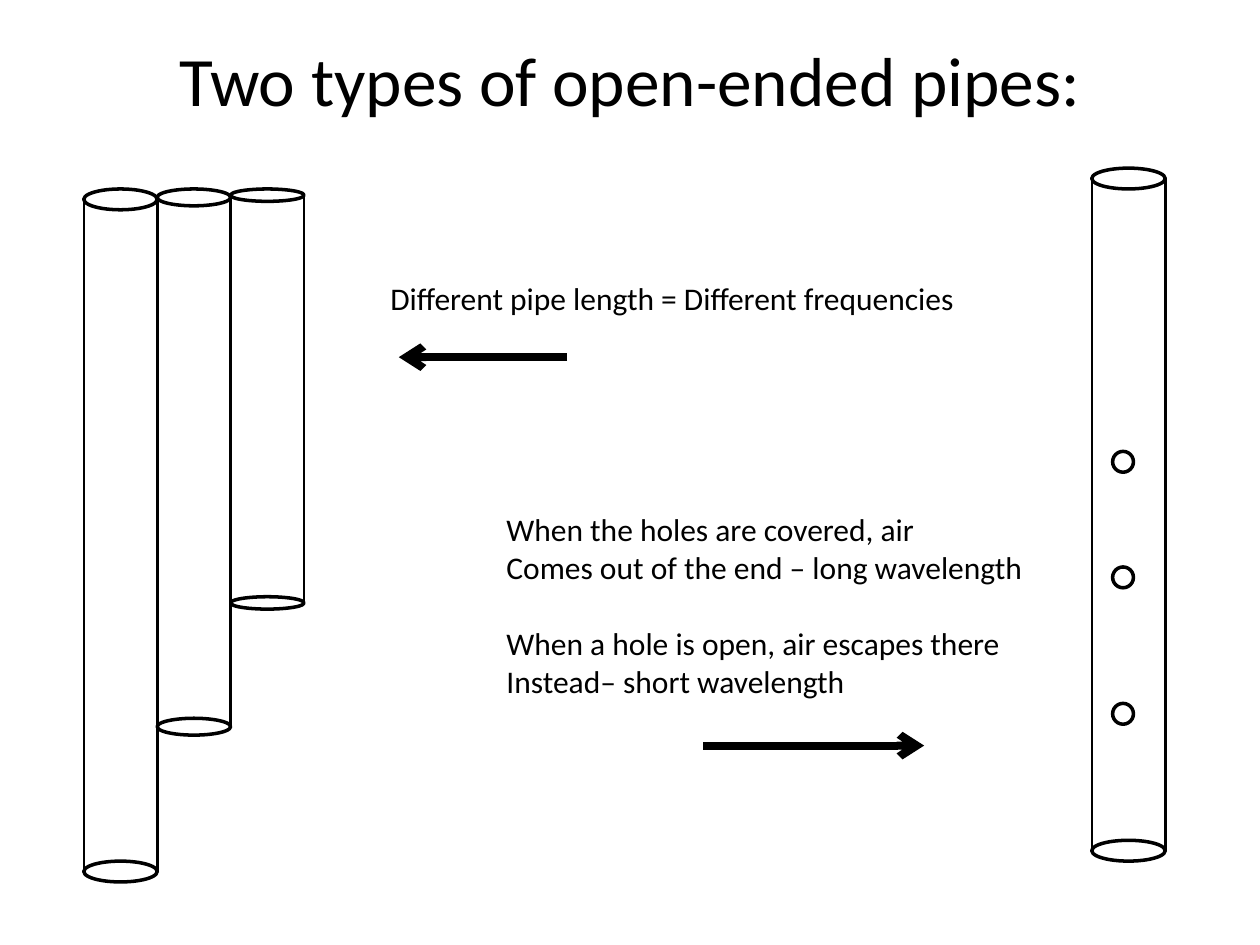
from lxml.etree import SubElement
from pptx import Presentation
from pptx.dml.color import RGBColor
from pptx.enum.shapes import MSO_CONNECTOR, MSO_SHAPE
from pptx.enum.text import MSO_ANCHOR, MSO_AUTO_SIZE, PP_ALIGN
from pptx.oxml.ns import qn
from pptx.util import Cm, Pt

COLORS = {"ink": "000000", "paper": "FFFFFF"}
INK = RGBColor.from_string(COLORS["ink"])

prs = Presentation()
prs.slide_width, prs.slide_height = Cm(25.4), Cm(19.05)
s = prs.slides.add_slide(prs.slide_layouts[6])
s.background.fill.solid()
s.background.fill.fore_color.rgb = RGBColor.from_string(COLORS["paper"])


def add_text(text, x, y, w, h, size=18, align=PP_ALIGN.LEFT, wrap=False,
             top=0.13, gap_before=()):
    """Add a text box; paragraphs listed in gap_before start a new block."""
    tf = s.shapes.add_textbox(Cm(x), Cm(y), Cm(w), Cm(h)).text_frame
    tf.word_wrap = wrap
    tf.auto_size = MSO_AUTO_SIZE.NONE if wrap else MSO_AUTO_SIZE.SHAPE_TO_FIT_TEXT
    tf.vertical_anchor = MSO_ANCHOR.TOP
    tf.margin_top = Cm(top)
    for i, line in enumerate(text.split("\n")):
        p = tf.paragraphs[0] if i == 0 else tf.add_paragraph()
        p.alignment = align
        if i in gap_before:
            p.space_before = Pt(size * 1.22)
        r = p.add_run()
        r.text = line
        r.font.name, r.font.size = "Calibri", Pt(size)
        r.font.color.rgb = INK


def add_outline(shapes, kind, x, y, w, h, width):
    """Add a black line or an unfilled ellipse, spanning w by h from x, y."""
    if kind == "line":
        sp = shapes.add_connector(MSO_CONNECTOR.STRAIGHT,
                                  Cm(x), Cm(y), Cm(x + w), Cm(y + h))
        SubElement(sp._element.spPr, qn("a:effectLst"))
    else:
        sp = shapes.add_shape(MSO_SHAPE.OVAL, Cm(x), Cm(y), Cm(w), Cm(h))
        sp.shadow.inherit = False
        sp.fill.background()
    sp.line.color.rgb = INK
    sp.line.width = Pt(width)
    return sp


# Title
add_text("Two types of open-ended pipes:", 1.27, 0.76, 22.86, 3.18,
         size=39.6, align=PP_ALIGN.CENTER, wrap=True, top=0)

# Pipes: three pan pipes side by side, then the flute
PIPE_W = 1.48
PAN_X, PAN_Y = 1.69, 3.81
FLUTE_X, FLUTE_Y = 22.01, 3.39
pipes = [(PAN_X + i * PIPE_W, PAN_Y, h, rim)
         for i, (h, rim) in enumerate([(13.97, 0.42), (11.01, 0.34), (8.47, 0.25)])]
pipes.append((FLUTE_X, FLUTE_Y, 13.97, 0.42))
for x, y, h, rim in pipes:
    shapes = s.shapes.add_group_shape().shapes
    add_outline(shapes, "ellipse", x, y, PIPE_W, rim, 2)
    for side in (x, x + PIPE_W):
        add_outline(shapes, "line", side, y + rim / 2, 0, h - rim, 1.5)
    add_outline(shapes, "ellipse", x, y + h - rim, PIPE_W, rim, 2)

# Flute holes
for y in (9.1, 11.43, 14.18):
    add_outline(s.shapes, "ellipse", 22.43, y, 0.42, 0.42, 2)

# Explanations
add_text("Different pipe length = Different frequencies", 7.62, 5.5, 12.04, 1.03)
add_text("When the holes are covered, air\n"
         "Comes out of the end – long wavelength\n"
         "When a hole is open, air escapes there\n"
         "Instead– short wavelength",
         9.96, 10.16, 11.05, 4.11, gap_before=(2,))

# Arrows pointing to the pipes
for x, y, w in ((11.43, 7.2, -3.39), (14.18, 15.03, 4.45)):
    arrow = add_outline(s.shapes, "line", x, y, w, 0, 4.5)
    SubElement(arrow.line._get_or_add_ln(), qn("a:tailEnd"), type="arrow")

prs.save("out.pptx")
